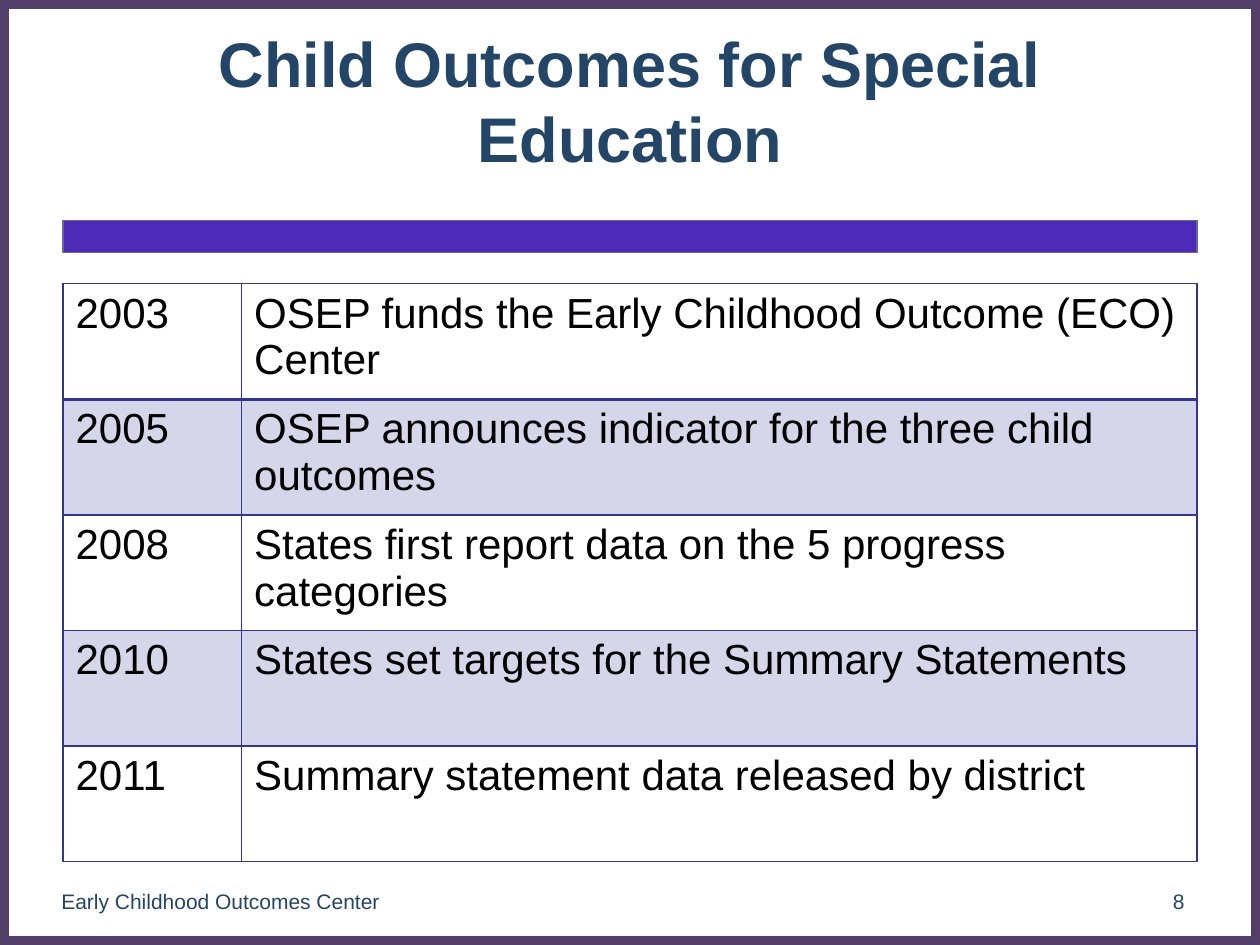
from dataclasses import dataclass

from lxml.etree import SubElement
from pptx import Presentation
from pptx.dml.color import RGBColor
from pptx.enum.shapes import MSO_SHAPE
from pptx.enum.text import MSO_ANCHOR, MSO_AUTO_SIZE, PP_ALIGN
from pptx.oxml.ns import qn
from pptx.util import Cm, Pt


@dataclass(frozen=True)
class Theme:
    font: str = "Arial"
    navy: str = "224568"
    black: str = "000000"
    frame: str = "523F69"
    bar: str = "4E2AB8"
    bar_line: str = "666699"
    grid: str = "333399"
    band_alpha: int = 20
    title_size: int = 36
    table_size: int = 24
    footer_size: int = 12


MILESTONES = [
    ("2003", "OSEP funds the Early Childhood Outcome (ECO) Center"),
    ("2005", "OSEP announces indicator for the three child outcomes"),
    ("2008", "States first report data on the 5 progress categories"),
    ("2010", "States set targets for the Summary Statements"),
    ("2011", "Summary statement data released by district"),
]


def write(tf, text, *, font, size, color, bold=False, align=PP_ALIGN.LEFT):
    p = tf.paragraphs[0]
    p.alignment = align
    r = p.add_run()
    r.text = text
    r.font.name = font
    r.font.size = Pt(size)
    r.font.bold = bold
    r.font.color.rgb = RGBColor.from_string(color)


class SlideBuilder:
    def __init__(self, slide, theme):
        self.s = slide
        self.theme = theme

    def title(self, text, left, top, width, height):
        sp = self.s.shapes.title
        sp.left, sp.top, sp.width, sp.height = map(Cm, (left, top, width, height))
        tf = sp.text_frame
        tf.word_wrap = True
        tf.auto_size = MSO_AUTO_SIZE.NONE
        tf.vertical_anchor = MSO_ANCHOR.MIDDLE
        write(tf, text, font=self.theme.font, size=self.theme.title_size,
              color=self.theme.navy, bold=True, align=PP_ALIGN.CENTER)

    def rect(self, left, top, width, height, *, line, weight, fill=None):
        sp = self.s.shapes.add_shape(
            MSO_SHAPE.RECTANGLE, *map(Cm, (left, top, width, height)))
        sp.shadow.inherit = False
        if fill:
            sp.fill.solid()
            sp.fill.fore_color.rgb = RGBColor.from_string(fill)
        else:
            sp.fill.background()
        sp.line.color.rgb = RGBColor.from_string(line)
        sp.line.width = Pt(weight)

    def footer(self, text, left, top, width, height, align):
        tf = self.s.shapes.add_textbox(
            *map(Cm, (left, top, width, height))).text_frame
        tf.word_wrap = True
        tf.vertical_anchor = MSO_ANCHOR.MIDDLE
        write(tf, text, font=self.theme.font, size=self.theme.footer_size,
              color=self.theme.navy, align=align)

    def border(self, cell, **weights):
        """Draw cell edges; keys are lnL, lnR, lnT, lnB and values are points."""
        tc_pr = cell._tc.get_or_add_tcPr()
        for index, (edge, weight) in enumerate(weights.items()):
            ln = SubElement(tc_pr, qn(f"a:{edge}"), w=str(Pt(weight)))
            fill = SubElement(ln, qn("a:solidFill"))
            SubElement(fill, qn("a:srgbClr"), val=self.theme.grid)
            tc_pr.insert(index, ln)

    def shade(self, cell, banded):
        if not banded:
            cell.fill.background()
            return
        cell.fill.solid()
        cell.fill.fore_color.rgb = RGBColor.from_string(self.theme.grid)
        color = cell._tc.tcPr.find(f"{qn('a:solidFill')}/{qn('a:srgbClr')}")
        SubElement(color, qn("a:alpha"), val=str(self.theme.band_alpha * 1000))

    def table(self, rows, left, top, col_widths, row_height):
        table = self.s.shapes.add_table(
            len(rows), len(col_widths), Cm(left), Cm(top),
            Cm(sum(col_widths)), Cm(row_height * len(rows))).table
        table.first_row = table.horz_banding = False
        for column, width in zip(table.columns, col_widths):
            column.width = Cm(width)
        for i, texts in enumerate(rows):
            table.rows[i].height = Cm(row_height)
            for j, text in enumerate(texts):
                cell = table.cell(i, j)
                write(cell.text_frame, text, font=self.theme.font,
                      size=self.theme.table_size, color=self.theme.black)
                self.shade(cell, banded=i % 2 == 1)
                self.border(cell, lnL=1, lnR=1, lnT=2 if i == 1 else 1,
                            lnB=2 if i == 0 else 1)


def main():
    prs = Presentation()
    prs.slide_width, prs.slide_height = Cm(25.4), Cm(19.05)
    theme = Theme()
    slide = SlideBuilder(prs.slides.add_slide(prs.slide_layouts[5]), theme)

    slide.rect(0, 0, 25.4, 19.05, line=theme.frame, weight=10)
    slide.rect(1.27, 4.45, 22.86, 0.64, line=theme.bar_line, weight=0.75,
               fill=theme.bar)
    slide.title("Child Outcomes for Special Education", 1.48, 0.42, 22.44, 3.18)
    slide.table(MILESTONES, 1.27, 5.72, col_widths=(3.6, 19.26), row_height=2.33)
    slide.footer("8", 18.2, 17.65, 5.93, 1.02, PP_ALIGN.RIGHT)
    slide.footer("Early Childhood Outcomes Center", 0.42, 17.65, 8.06, 1.02,
                 PP_ALIGN.CENTER)
    prs.save("out.pptx")


if __name__ == "__main__":
    main()
